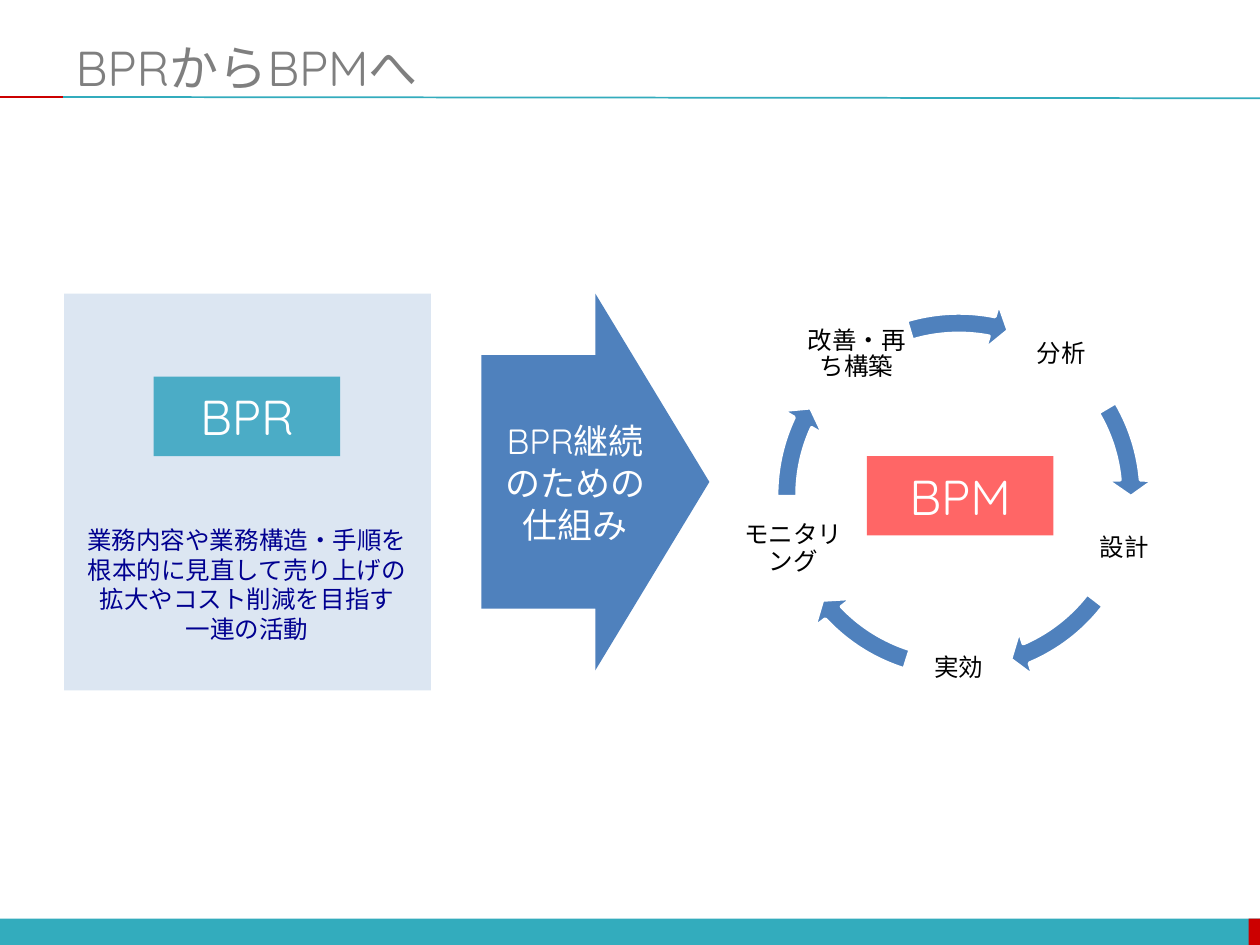
from math import cos, radians, sin

from lxml.etree import SubElement
from pptx import Presentation
from pptx.dml.color import RGBColor
from pptx.enum.shapes import MSO_CONNECTOR, MSO_SHAPE
from pptx.enum.text import MSO_ANCHOR, PP_ALIGN
from pptx.oxml.ns import qn
from pptx.util import Inches, Pt

# Content
TITLE = "BPRからBPMへ"
BPR_SUMMARY = [
    "業務内容や業務構造・手順を",
    "根本的に見直して売り上げの",
    "拡大やコスト削減を目指す",
    "一連の活動",
]
TRANSITION = "BPR継続のための仕組み"
# Cycle step, then end and start angle of the arrow leaving it
CYCLE = [
    ("分析", 212.94, 197.66),
    ("設計", 40.15, 22.53),
    ("実効", 82.11, 64.49),
    ("モニタリング", 122.98, 107.71),
    ("改善・再ち構築", 168.66, 151.98),
]

FONT = "Quicksand"
TEAL, RED, BLUE, WHITE = "33ACBD", "CC0000", "4F81BD", "FFFFFF"
CYCLE_X, CYCLE_Y, CYCLE_RADIUS = 7.61, 3.93, 1.38
STEP_SIZE, RING_SIZE = 0.83, 3.11


def color(hex_code):
    return RGBColor.from_string(hex_code)


def inches(*lengths):
    return [Inches(length) for length in lengths]


def add_filled(kind, box, fill, adjustments=()):
    shape = slide.shapes.add_shape(kind, *inches(*box))
    shape.shadow.inherit = False
    shape.fill.solid()
    shape.fill.fore_color.rgb = color(fill)
    shape.line.fill.background()
    for index, value in enumerate(adjustments):
        shape.adjustments[index] = value
    return shape


def add_rule(ends, line_color):
    rule = slide.shapes.add_connector(MSO_CONNECTOR.STRAIGHT, *inches(*ends))
    rule.line.color.rgb = color(line_color)
    rule.line.width = Pt(1)
    SubElement(rule._element.spPr, qn("a:effectLst"))


def write(shape, text, size, text_color, align=PP_ALIGN.CENTER,
          anchor=MSO_ANCHOR.MIDDLE, inset=None, spacing=None):
    frame = shape.text_frame
    frame.text = text
    frame.word_wrap = True
    frame.vertical_anchor = anchor
    if inset is not None:
        frame.margin_left = frame.margin_right = Inches(inset)
        frame.margin_top = frame.margin_bottom = Inches(inset)
    for paragraph in frame.paragraphs:
        paragraph.alignment = align
        paragraph.line_spacing = spacing
        for run in paragraph.runs:
            run.font.size = Pt(size)
            run.font.name = FONT
            run.font.color.rgb = color(text_color)


def add_text(box, text, size, text_color, **layout):
    write(slide.shapes.add_textbox(*inches(*box)), text, size, text_color, **layout)


def add_badge(left, top, text, fill):
    badge = add_filled(MSO_SHAPE.ROUNDED_RECTANGLE, (left, top, 1.48, 0.63), fill, [0])
    write(badge, text, 28, WHITE)


prs = Presentation()
prs.slide_width, prs.slide_height = inches(10, 7.5)
slide = prs.slides.add_slide(prs.slide_layouts[5])

# Footer band and title rule
add_filled(MSO_SHAPE.RECTANGLE, (0, 7.29, 10, 0.22), TEAL)
add_filled(MSO_SHAPE.RECTANGLE, (9.91, 7.29, 0.1, 0.22), RED)
add_rule((0.5, 0.77, 10, 0.78), TEAL)
add_rule((0, 0.77, 0.5, 0.77), RED)

# Title
title = slide.shapes.title
title.left, title.top, title.width, title.height = inches(0.5, 0.3, 9.5, 0.46)
write(title, TITLE, 28, "7F7F7F", align=PP_ALIGN.LEFT)

# BPR panel
add_filled(MSO_SHAPE.ROUNDED_RECTANGLE, (0.51, 2.33, 2.91, 3.15), "DCE6F2", [0])
add_badge(1.22, 2.99, "BPR", "4BACC6")
add_text((0.32, 4.12, 3.28, 1.04), "\n".join(BPR_SUMMARY), 14, "000090",
         anchor=MSO_ANCHOR.TOP)

# Transition arrow
add_filled(MSO_SHAPE.RIGHT_ARROW, (3.82, 2.33, 1.81, 2.99), BLUE, [0.673, 0.5])
add_text((3.82, 3.28, 1.49, 1.11), TRANSITION, 20, WHITE, anchor=MSO_ANCHOR.TOP)

# BPM cycle: steps evenly spaced on a circle, clockwise from upper right
ring_box = (CYCLE_X - RING_SIZE / 2, CYCLE_Y - RING_SIZE / 2, RING_SIZE, RING_SIZE)
for index, (step, arrow_end, arrow_start) in enumerate(CYCLE):
    angle = radians(-54 + index * 360 / len(CYCLE))
    left = CYCLE_X + CYCLE_RADIUS * cos(angle) - STEP_SIZE / 2
    top = CYCLE_Y + CYCLE_RADIUS * sin(angle) - STEP_SIZE / 2
    add_text((left, top, STEP_SIZE, STEP_SIZE), step, 14, "000000",
             inset=0.02, spacing=0.9)
    arrow = add_filled(MSO_SHAPE.CIRCULAR_ARROW, ring_box, BLUE,
                       [0.052, 3.358, arrow_end, arrow_start, 0.061])
    arrow.line.color.rgb = color(WHITE)
    arrow.line.width = Pt(2)
add_badge(6.88, 3.62, "BPM", "FF6666")

prs.save("out.pptx")
